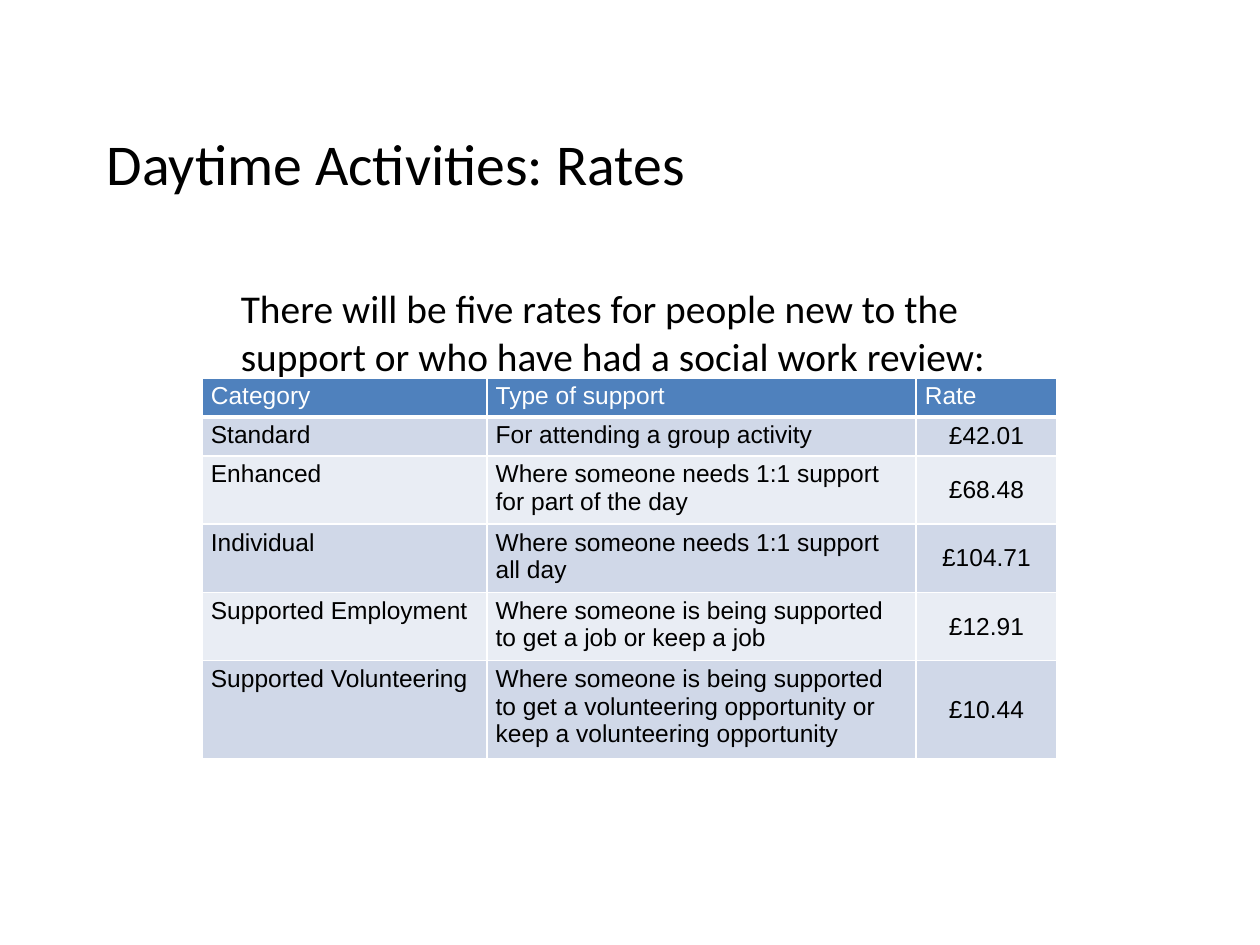
from dataclasses import dataclass

from lxml import etree
from pptx import Presentation
from pptx import util as u
from pptx.dml import color
from pptx.enum import text
from pptx.oxml import ns


@dataclass(frozen=True)
class Theme:
    ink: str = "000000"
    paper: str = "FFFFFF"
    header: str = "4F81BD"
    bands: tuple = ("D0D8E8", "E9EDF4")
    heading_font: str = "Calibri"
    table_font: str = "Arial"
    title_size: float = 33
    body_size: float = 22.5
    table_size: float = 14


THEME = Theme()
HEADINGS = ("Category", "Type of support", "Rate")
RATES = (
    ("Standard", "For attending a group activity", "£42.01"),
    ("Enhanced", "Where someone needs 1:1 support for part of the day", "£68.48"),
    ("Individual", "Where someone needs 1:1 support all day", "£104.71"),
    ("Supported Employment",
     "Where someone is being supported to get a job or keep a job", "£12.91"),
    ("Supported Volunteering",
     "Where someone is being supported to get a volunteering opportunity "
     "or keep a volunteering opportunity", "£10.44"),
)
COLUMN_WIDTHS = (162.75, 245.25, 80.5)
ROW_HEIGHTS = (22, 22, 37.8, 37.8, 37.8, 53.4)


def style_font(para, name, size, tint):
    for span in para.runs:
        span.font.name = name
        span.font.size = u.Pt(size)
        span.font.color.rgb = color.RGBColor.from_string(tint)


def add_text(page, area, words, size, anchor):
    box = page.shapes.add_textbox(*map(u.Pt, area))
    frame = box.text_frame
    frame.word_wrap = True
    frame.vertical_anchor = anchor
    frame.text = words
    style_font(frame.paragraphs[0], THEME.heading_font, size, THEME.ink)


def set_borders(cell, bottom_width):
    properties = cell._tc.get_or_add_tcPr()
    for side, width in (("L", 1), ("R", 1), ("T", 1), ("B", bottom_width)):
        line = etree.SubElement(properties, ns.qn(f"a:ln{side}"), w=str(u.Pt(width)))
        fill = etree.SubElement(line, ns.qn("a:solidFill"))
        etree.SubElement(fill, ns.qn("a:srgbClr"), val=THEME.paper)


def style_cell(cell, words, is_header, is_rate, background):
    set_borders(cell, 3 if is_header else 1)
    cell.fill.solid()
    cell.fill.fore_color.rgb = color.RGBColor.from_string(background)
    cell.text = words
    para = cell.text_frame.paragraphs[0]
    style_font(para, THEME.table_font, THEME.table_size,
               THEME.paper if is_header else THEME.ink)
    para.font.size = u.Pt(THEME.table_size)
    centred = is_rate and not is_header
    side, edge = (4.5, 0) if centred else (5, 2.7)
    cell.margin_left = cell.margin_right = u.Pt(side)
    cell.margin_top = cell.margin_bottom = u.Pt(edge)
    if centred:
        cell.vertical_anchor = text.MSO_ANCHOR.MIDDLE
        para.alignment = text.PP_ALIGN.CENTER


def add_rates_table(page, area):
    rows = (HEADINGS,) + RATES
    table = page.shapes.add_table(len(rows), len(HEADINGS), *map(u.Pt, area)).table
    for column, share in zip(table.columns, COLUMN_WIDTHS):
        column.width = u.Pt(area[2] * share / sum(COLUMN_WIDTHS))
    for row, share in zip(table.rows, ROW_HEIGHTS):
        row.height = u.Pt(area[3] * share / sum(ROW_HEIGHTS))
    for r, row in enumerate(rows):
        background = THEME.bands[(r - 1) % 2] if r else THEME.header
        for c, words in enumerate(row):
            style_cell(table.cell(r, c), words, r == 0,
                       c == len(HEADINGS) - 1, background)


def build_rates_page(page, area):
    left, top, width, height = area
    add_text(page, (left + 54, top + 48, width - 108, 90),
             "Daytime Activities: Rates", THEME.title_size, text.MSO_ANCHOR.MIDDLE)
    add_text(page, (left + 130.5, top + 159, width - 261, 268),
             "There will be five rates for people new to the support "
             "or who have had a social work review:",
             THEME.body_size, text.MSO_ANCHOR.TOP)
    add_rates_table(page, (left + 115.5, top + 216, width - 231.5, 210.8))


def main():
    deck = Presentation()
    deck.slide_width, deck.slide_height = u.Pt(720), u.Pt(540)
    page = deck.slides.add_slide(deck.slide_layouts[6])
    build_rates_page(page, (0, 0, 720, 540))
    deck.save("out.pptx")


if __name__ == "__main__":
    main()
